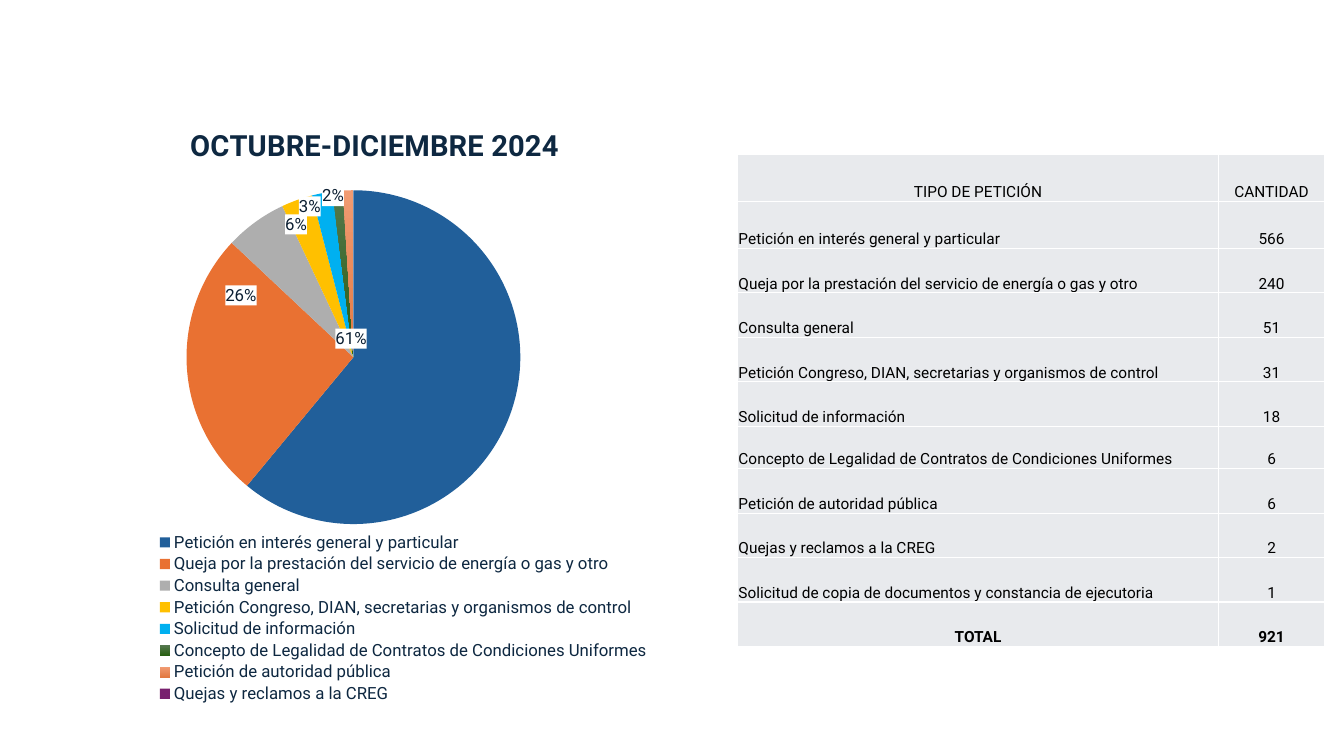
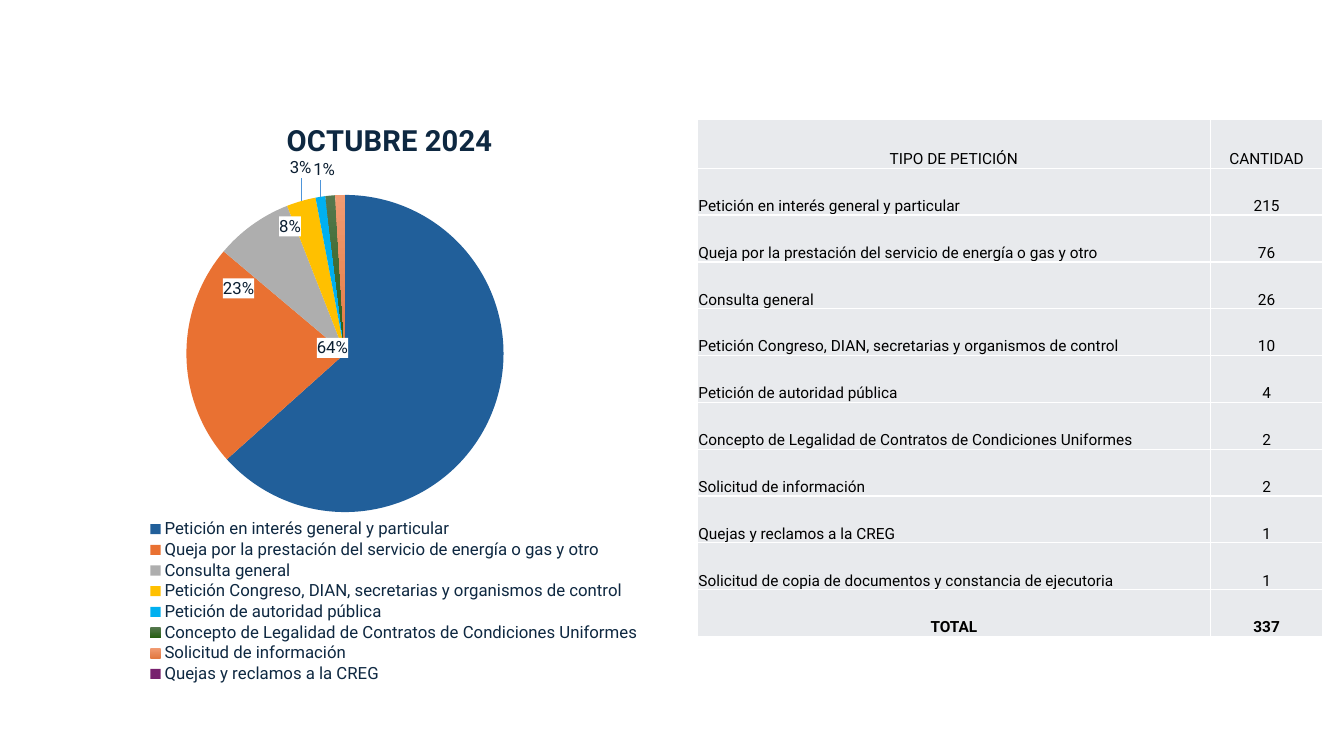
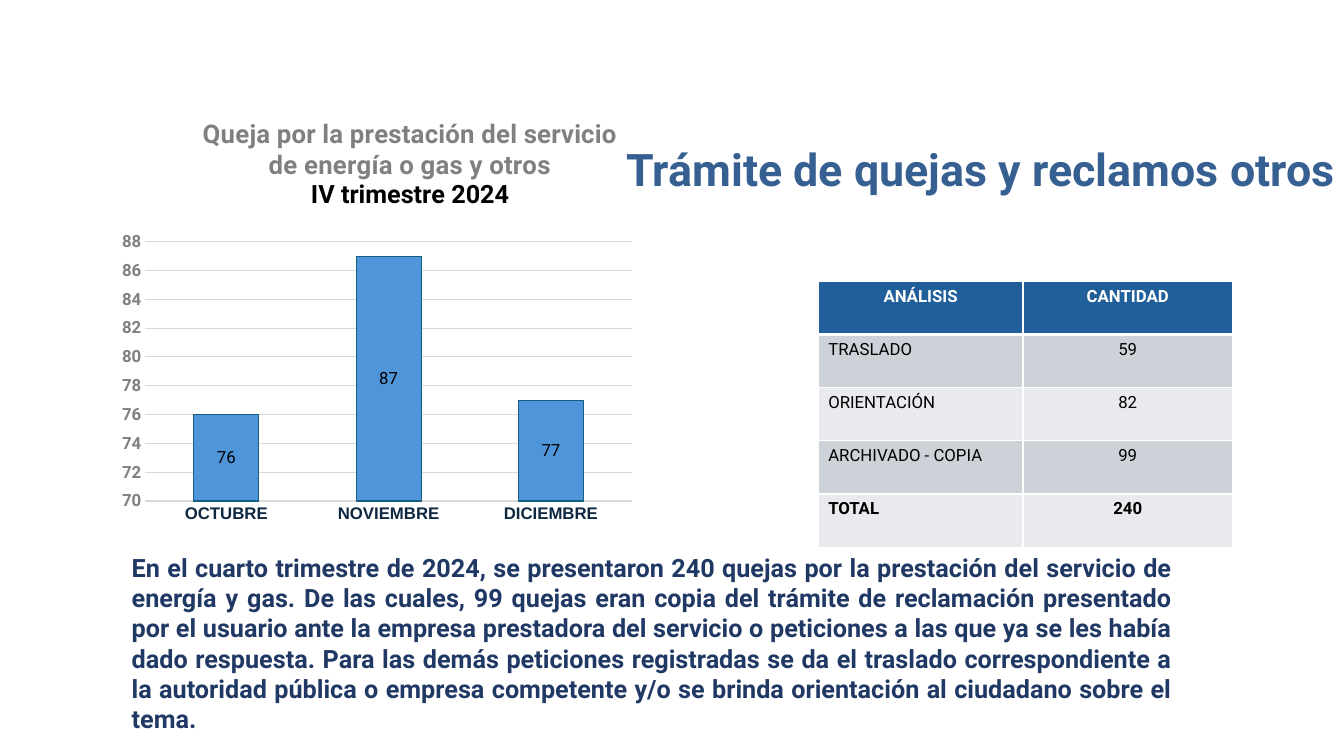
import math
from lxml import etree
from pptx import Presentation
from pptx import oxml
from pptx import util as u
from pptx.chart import data as cd
from pptx.dml.color import RGBColor
from pptx.enum import chart as ec
from pptx.enum import text as et
from pptx.oxml import ns

NAVY = RGBColor(0x0E, 0x28, 0x41)
LABEL = RGBColor(0x0B, 0x1E, 0x31)
BLUE = RGBColor(0x21, 0x5F, 0x9A)
TITLE = RGBColor(0x37, 0x60, 0x92)
BODY = RGBColor(0x20, 0x38, 0x64)
BAR = RGBColor(0x4E, 0x95, 0xD9)
BAR_LINE = RGBColor(0x15, 0x5E, 0x7F)
GRAY = RGBColor(0x80, 0x80, 0x80)
GRID = RGBColor(0xD9, 0xD9, 0xD9)
PALE = RGBColor(0xE8, 0xEA, 0xED)
MID = RGBColor(0xCC, 0xD2, 0xD8)
BLACK = RGBColor(0, 0, 0)
WHITE = RGBColor(0xFF, 0xFF, 0xFF)
SLICES = [
    (BLUE,),
    (RGBColor(0xE9, 0x71, 0x32),),
    (RGBColor(0xAE, 0xAE, 0xAE),),
    (RGBColor(0xFF, 0xC0, 0x00),),
    (RGBColor(0x00, 0xB0, 0xF0),),
    (RGBColor(0x55, 0x78, 0x4E), RGBColor(0x27, 0x5F, 0x12)),
    (RGBColor(0xF1, 0x9B, 0x72), RGBColor(0xE2, 0x79, 0x42)),
    (RGBColor(0x78, 0x20, 0x6E),),
    (RGBColor(0x7B, 0xD2, 0x62), RGBColor(0x56, 0xC3, 0x30)),
]
FONT = "Roboto"
PLOT = (0, 0.148, 0.951, 0.552)
LABEL_GAP = 0.15
LABEL_HALF_HEIGHT = 0.24
DIGIT_HALF_WIDTH = 0.13
CENTER = et.PP_ALIGN.CENTER

GENERAL = "Petición en interés general y particular"
QUEJA = "Queja por la prestación del servicio de energía o gas y otro"
CONSULTA = "Consulta general"
CONGRESO = "Petición Congreso, DIAN, secretarias y organismos de control"
INFORMACION = "Solicitud de información"
CONCEPTO = "Concepto de Legalidad de Contratos de Condiciones Uniformes"
AUTORIDAD = "Petición de autoridad pública"
CREG = "Quejas y reclamos a la CREG"
COPIA = "Solicitud de copia de documentos y constancia de ejecutoria"


def fmt(font, size, color, bold=False, name=FONT):
    font.size = u.Pt(size)
    font.color.rgb = color
    font.bold = bold
    font.name = name


def place(chart, tag, box):
    el = chart._chartSpace.xpath("c:chart/" + tag)[0]
    for old in el.findall(ns.qn("c:layout")):
        el.remove(old)
    target = '<c:layoutTarget val="inner"/>' if tag == "c:plotArea" else ""
    keys = zip("xywh", box)
    vals = "".join(f'<c:{k} val="{v}"/>' for k, v in keys)
    modes = '<c:xMode val="edge"/><c:yMode val="edge"/>'
    layout = oxml.parse_xml(
        f'<c:layout {ns.nsdecls("c")}><c:manualLayout>{target}{modes}{vals}'
        "</c:manualLayout></c:layout>")
    overlay = el.find(ns.qn("c:overlay"))
    if overlay is None:
        el.insert(0, layout)
    else:
        overlay.addprevious(layout)


prs = Presentation()
prs.slide_width = u.Cm(33.87)
prs.slide_height = u.Cm(19.05)
blank = prs.slide_layouts[6]
tables = []

pies = [
    dict(title="OCTUBRE-DICIEMBRE 2024", total=921,
         rows=[(GENERAL, 566), (QUEJA, 240), (CONSULTA, 51), (CONGRESO, 31),
               (INFORMACION, 18), (CONCEPTO, 6), (AUTORIDAD, 6), (CREG, 2),
               (COPIA, 1)],
         at=(1.88, 2.54, 14.78, 15.24), title_at=(0.188, 0.032),
         labels=[(8.84, 8.53), (6.07, 7.44), (7.47, 5.66), (7.82, 5.21),
                 (8.41, 4.95)],
         table_at=(18.59, 3.9), cols=(12.12, 2.67),
         heights=[1.17, 1.19] + [1.12] * 4 + [1.07] + [1.12] * 4),
    dict(title="OCTUBRE 2024", total=337,
         rows=[(GENERAL, 215), (QUEJA, 76), (CONSULTA, 26), (CONGRESO, 10),
               (AUTORIDAD, 4), (CONCEPTO, 2), (INFORMACION, 2), (CREG, 1),
               (COPIA, 1)],
         at=(1.8, 2.77, 14.5, 14.48), title_at=(0.365, 0.01),
         labels=[(8.38, 8.76), (6.02, 7.26), (7.32, 5.72), (7.59, 4.24),
                 (8.18, 4.29)],
         table_at=(17.58, 3), cols=(12.92, 2.84),
         heights=[1.24] + [1.18] * 10),
]

for pie in pies:
    s = prs.slides.add_slide(blank)
    names = [name for name, n in pie["rows"]]
    shares = [round(100 * n / pie["total"]) for name, n in pie["rows"]]
    data = cd.CategoryChartData()
    data.categories = names
    data.add_series("Series 1", shares)
    x, y, w, h = pie["at"]
    chart = s.shapes.add_chart(
        ec.XL_CHART_TYPE.PIE, u.Cm(x), u.Cm(y), u.Cm(w), u.Cm(h), data).chart
    fmt(chart.font, 10, BLACK)
    chart.has_title = True
    tf = chart.chart_title.text_frame
    tf.text = pie["title"]
    fmt(tf.paragraphs[0].runs[0].font, 20.8, NAVY, True)
    place(chart, "c:title", pie["title_at"])
    place(chart, "c:plotArea", PLOT)

    chart.has_legend = True
    legend = chart.legend
    legend.position = ec.XL_LEGEND_POSITION.RIGHT
    legend.include_in_layout = False
    fmt(legend.font, 12, NAVY)
    place(chart, "c:legend", (0.131, 0.711, 0.86, 0.289))
    chart._chartSpace.xpath("c:chart/c:legend/c:legendPos")[0].addnext(
        oxml.parse_xml(
            f'<c:legendEntry {ns.nsdecls("c")}><c:idx val="{len(names) - 1}"/>'
            '<c:delete val="1"/></c:legendEntry>'))

    plot = chart.plots[0]
    plot.vary_by_categories = True
    ser = plot.series[0]
    for i, colors in enumerate(SLICES):
        fill = ser.points[i].format.fill
        if len(colors) == 1:
            fill.solid()
            fill.fore_color.rgb = colors[0]
        else:
            fill.gradient()
            fill.gradient_angle = 270
            for stop, color in zip(fill.gradient_stops, colors):
                stop.color.rgb = color

    style = (
        '<c:numFmt formatCode="0&quot;%&quot;" sourceLinked="0"/>'
        f'<c:spPr><a:solidFill><a:srgbClr val="{WHITE}"/></a:solidFill></c:spPr>'
        '<c:txPr><a:bodyPr/><a:p><a:pPr><a:defRPr sz="1200" b="0"><a:solidFill>'
        f'<a:srgbClr val="{LABEL}"/></a:solidFill><a:latin typeface="{FONT}"/>'
        '</a:defRPr></a:pPr><a:endParaRPr lang="es-CO"/></a:p></c:txPr>'
        '<c:dLblPos val="bestFit"/><c:showLegendKey val="0"/>'
        '<c:showVal val="1"/><c:showCatName val="0"/><c:showSerName val="0"/>'
        '<c:showPercent val="0"/><c:showBubbleSize val="0"/>')
    cx = x + w * (PLOT[0] + PLOT[2] / 2)
    cy = y + h * (PLOT[1] + PLOT[3] / 2)
    reach = min(w * PLOT[2], h * PLOT[3]) / 2 + LABEL_GAP
    labels = ""
    for i in range(len(names)):
        if i < len(pie["labels"]):
            lx, ly = pie["labels"][i]
            angle = 2 * math.pi * (sum(shares[:i]) + shares[i] / 2) / sum(shares)
            ux, uy = math.sin(angle), -math.cos(angle)
            half_width = DIGIT_HALF_WIDTH * (len(str(shares[i])) + 1)
            ax = cx + reach * ux + math.copysign(half_width, ux)
            ay = cy + reach * uy
            if abs(uy) > 0.09:
                ay += math.copysign(LABEL_HALF_HEIGHT, uy)
            body = ('<c:layout><c:manualLayout>'
                    f'<c:x val="{(lx - ax) / w:.3f}"/>'
                    f'<c:y val="{(ly - ay) / h:.3f}"/>'
                    f'</c:manualLayout></c:layout>{style}')
        else:
            body = '<c:delete val="1"/>'
        labels += f'<c:dLbl><c:idx val="{i}"/>{body}</c:dLbl>'
    ser._element.find(ns.qn("c:cat")).addprevious(oxml.parse_xml(
        f'<c:dLbls {ns.nsdecls("c", "a")}>{labels}{style}'
        '<c:showLeaderLines val="1"/><c:leaderLines><c:spPr><a:ln w="9525">'
        f'<a:solidFill><a:srgbClr val="{BAR}"/></a:solidFill></a:ln></c:spPr>'
        '</c:leaderLines></c:dLbls>'))

    cells = [("TIPO DE PETICIÓN", "CANTIDAD"), *pie["rows"],
             ("TOTAL", pie["total"])]
    tables.append(dict(
        slide=s, at=pie["table_at"], cols=pie["cols"], heights=pie["heights"],
        cells=cells, size=11, fills=[PALE] * len(cells), header=BLACK,
        header_bold=False, header_line=1, tight=True))

s = prs.slides.add_slide(blank)
data = cd.CategoryChartData()
data.categories = ["OCTUBRE", "NOVIEMBRE", "DICIEMBRE"]
data.add_series("Series 1", (76, 87, 77))
chart = s.shapes.add_chart(
    ec.XL_CHART_TYPE.COLUMN_STACKED, u.Cm(2.79), u.Cm(2.79), u.Cm(13.41),
    u.Cm(10.59), data).chart
fmt(chart.font, 10, BLACK)
chart.has_legend = False
chart.has_title = True
tf = chart.chart_title.text_frame
tf.text = ("Queja por la prestación del servicio de energía o gas y otros\n"
           "IV trimestre 2024")
for p, size, color in zip(tf.paragraphs, (18.4, 18), (GRAY, BLACK)):
    fmt(p.runs[0].font, size, color, True)
place(chart, "c:title", (0.167, 0.009))
place(chart, "c:plotArea", (0.065, 0.312, 0.915, 0.617))
plot = chart.plots[0]
plot.gap_width = 150
plot.overlap = 100
plot.vary_by_categories = False
fill = plot.series[0].format.fill
fill.solid()
fill.fore_color.rgb = BAR
line = plot.series[0].format.line
line.color.rgb = BAR_LINE
line.width = u.Pt(0.75)
plot.has_data_labels = True
plot.data_labels.show_value = True
plot.data_labels.position = ec.XL_LABEL_POSITION.CENTER
fmt(plot.data_labels.font, 12, BLACK)
for axis, color, name in ((chart.category_axis, NAVY, "Arial"),
                          (chart.value_axis, GRAY, FONT)):
    axis.major_tick_mark = ec.XL_TICK_MARK.NONE
    axis.minor_tick_mark = ec.XL_TICK_MARK.NONE
    axis.format.line.fill.background()
    fmt(axis.tick_labels.font, 12, color, True, name)
axis = chart.value_axis
axis.minimum_scale = 70
axis.maximum_scale = 88
axis.major_unit = 2
axis.has_major_gridlines = True
axis.major_gridlines.format.line.color.rgb = GRID
axis.major_gridlines.format.line.width = u.Pt(0.75)

tables.append(dict(
    slide=s, at=(20.62, 7.09), cols=(5.16, 5.28), heights=[1.34] * 5,
    cells=[("ANÁLISIS", "CANTIDAD"), ("TRASLADO", 59), ("ORIENTACIÓN", 82),
           ("ARCHIVADO - COPIA", 99), ("TOTAL", 240)],
    size=12, fills=[BLUE, MID, PALE, MID, PALE], header=WHITE,
    header_bold=True, header_line=3, tight=False))

texts = [
    ("En el cuarto trimestre de 2024, se presentaron 240 quejas por la "
     "prestación del servicio de energía y gas. De las cuales, 99 quejas eran "
     "copia del trámite de reclamación presentado por el usuario ante la "
     "empresa prestadora del servicio o peticiones a las que ya se les había "
     "dado respuesta. Para las demás peticiones registradas se da el traslado "
     "correspondiente a la autoridad pública o empresa competente y/o se "
     "brinda orientación al ciudadano sobre el tema.",
     (3.07, 13.79, 26.72, 4.88), 18, BODY, et.PP_ALIGN.JUSTIFY,
     et.MSO_ANCHOR.TOP, 1),
    ("Trámite de quejas y reclamos otros", (15.54, 2.79, 19.81, 2.29), 32,
     TITLE, et.PP_ALIGN.LEFT, et.MSO_ANCHOR.BOTTOM, 0.9),
]
for text, at, size, color, align, anchor, spacing in texts:
    tf = s.shapes.add_textbox(*[u.Cm(v) for v in at]).text_frame
    tf.word_wrap = True
    tf.vertical_anchor = anchor
    tf.text = text
    p = tf.paragraphs[0]
    p.alignment = align
    p.line_spacing = spacing
    fmt(p.runs[0].font, size, color, True)

for t in tables:
    x, y = t["at"]
    last = len(t["cells"]) - 1
    table = t["slide"].shapes.add_table(
        last + 1, 2, u.Cm(x), u.Cm(y), u.Cm(sum(t["cols"])),
        u.Cm(sum(t["heights"]))).table
    for col, width in zip(table.columns, t["cols"]):
        col.width = u.Cm(width)
    for i, row in enumerate(table.rows):
        row.height = u.Cm(t["heights"][i])
        for j, cell in enumerate(row.cells):
            cell.text = str(t["cells"][i][j])
            p = cell.text_frame.paragraphs[0]
            header = i == 0
            if j == 1 or header or (t["tight"] and i == last):
                p.alignment = CENTER
            fmt(p.runs[0].font, t["size"], t["header"] if header else BLACK,
                t["header_bold"] if header else i == last)
            if t["tight"]:
                cell.vertical_anchor = et.MSO_ANCHOR.BOTTOM
                cell.margin_left = cell.margin_right = u.Cm(0.02)
                cell.margin_top = u.Cm(0.02)
                cell.margin_bottom = 0
            tcPr = cell._tc.get_or_add_tcPr()
            for side in "LRTB":
                thick = (side, i) in (("B", 0), ("T", 1))
                width = u.Pt(t["header_line"] if thick else 1)
                ln = etree.SubElement(tcPr, ns.qn("a:ln" + side), w=str(width))
                solid = etree.SubElement(ln, ns.qn("a:solidFill"))
                etree.SubElement(solid, ns.qn("a:srgbClr"), val=str(WHITE))
            cell.fill.solid()
            cell.fill.fore_color.rgb = t["fills"][i]

prs.save("out.pptx")
